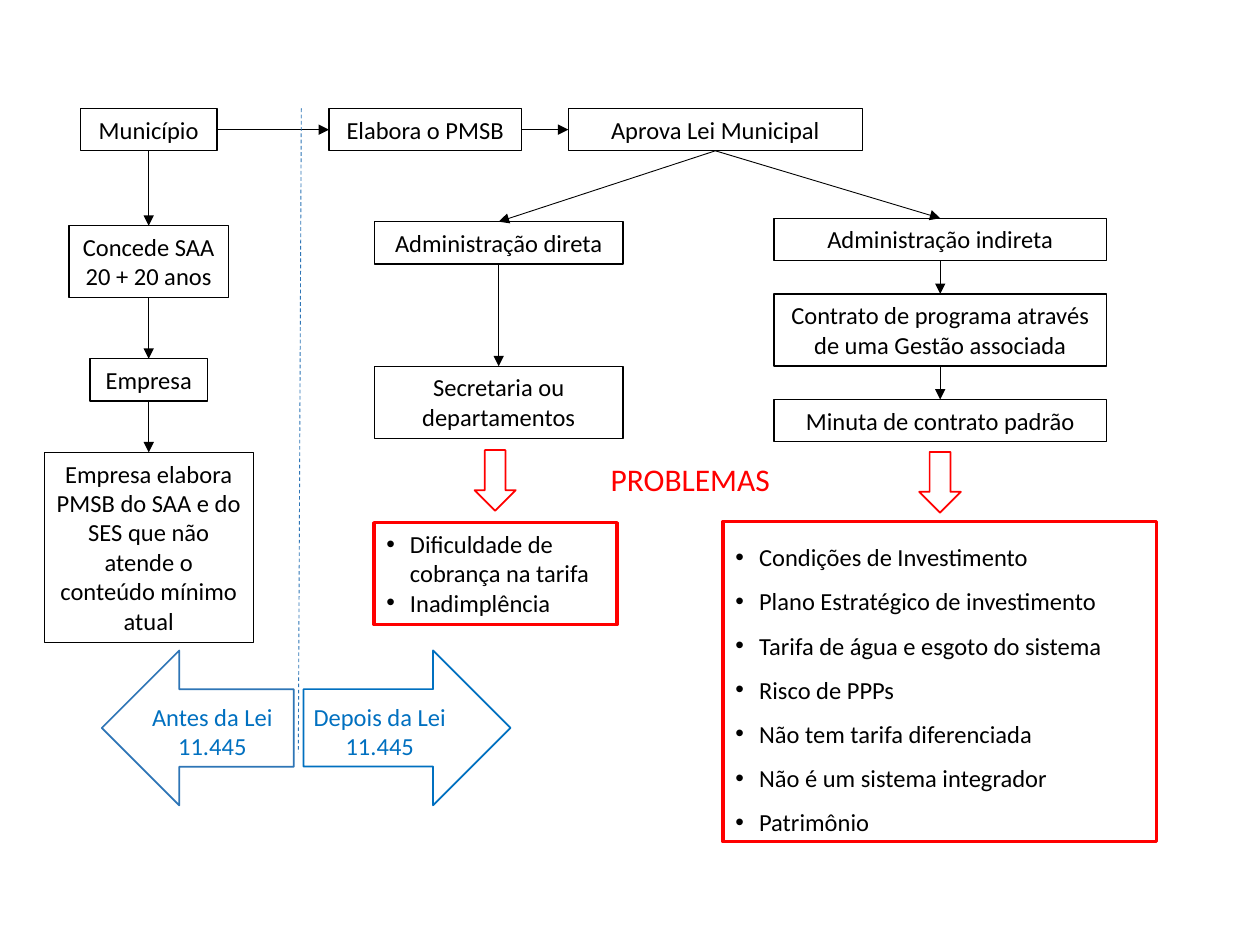
from dataclasses import dataclass
from itertools import pairwise

from lxml import etree
from pptx import Presentation
from pptx.dml.color import RGBColor
from pptx.enum import dml, shapes, text
from pptx.oxml import ns
from pptx.util import Pt

BLACK = RGBColor(0x00, 0x00, 0x00)
RED = RGBColor(0xFF, 0x00, 0x00)
BLUE = RGBColor(0x00, 0x70, 0xC0)
DARK_BLUE = RGBColor(0x2E, 0x75, 0xB6)
FONT = "Calibri"
TOP, LEFT, BOTTOM, RIGHT = 0, 1, 2, 3
ONE_LINE, TWO_LINES = 24.2, 41.2
INDENT = 13.5
LEFT_AXIS, DIRECT_AXIS, INDIRECT_AXIS = 85, 285, 537.3
FIRST_ROW = 62


@dataclass(frozen=True)
class Step:
    lines: tuple[str, ...]
    axis: float
    top: float
    width: float
    height: float = ONE_LINE


@dataclass(frozen=True)
class ProblemBox:
    lines: tuple[str, ...]
    left: float
    top: float
    width: float
    height: float
    spacing: float


@dataclass(frozen=True)
class BlockArrow:
    kind: shapes.MSO_SHAPE
    left: float
    top: float
    width: float
    height: float
    color: RGBColor
    rotation: float = 0


@dataclass(frozen=True)
class Label:
    text: str
    left: float
    top: float
    width: float
    height: float
    color: RGBColor
    size: float = 14


BEFORE_LAW = (
    Step(("Município",), LEFT_AXIS, FIRST_ROW, 78),
    Step(("Concede SAA", "20 + 20 anos"), LEFT_AXIS, 129, 91, TWO_LINES),
    Step(("Empresa",), LEFT_AXIS, 205, 67),
    Step(("Empresa elabora PMSB do SAA e do SES que não atende o conteúdo mínimo atual",),
         LEFT_AXIS, 258.5, 119.5, 108.8),
)
PLANNING = (
    Step(("Elabora o PMSB",), 243, FIRST_ROW, 110),
    Step(("Aprova Lei Municipal",), 408.8, FIRST_ROW, 168),
)
DIRECT = (
    Step(("Administração direta",), DIRECT_AXIS, 126.7, 142),
    Step(("Secretaria ou departamentos",), DIRECT_AXIS, 209.3, 142, TWO_LINES),
)
INDIRECT = (
    Step(("Administração indireta",), INDIRECT_AXIS, 124.7, 190),
    Step(("Contrato de programa através de uma Gestão associada",),
         INDIRECT_AXIS, 168, 190, TWO_LINES),
    Step(("Minuta de contrato padrão",), INDIRECT_AXIS, 228.3, 190),
)
PROBLEMS = (
    ProblemBox(("Dificuldade de cobrança na tarifa", "Inadimplência"),
               213.7, 298.7, 139, 58.2, 1),
    ProblemBox(("Condições de Investimento", "Plano Estratégico de investimento",
                "Tarifa de água e esgoto do sistema", "Risco de PPPs",
                "Não tem tarifa diferenciada", "Não é um sistema integrador",
                "Patrimônio"),
               413.2, 298, 247.7, 183, 1.5),
)
BLOCK_ARROWS = (
    BlockArrow(shapes.MSO_SHAPE.RIGHT_ARROW, 173.5, 371.7, 118.2, 88.5, BLUE),
    BlockArrow(shapes.MSO_SHAPE.RIGHT_ARROW, 58.2, 371.7, 109.7, 88.5, DARK_BLUE, 180),
    BlockArrow(shapes.MSO_SHAPE.DOWN_ARROW, 271.2, 257.2, 23.5, 34.7, RED),
    BlockArrow(shapes.MSO_SHAPE.DOWN_ARROW, 525.3, 258.3, 23.8, 34.7, RED),
)
LABELS = (
    Label("Antes da Lei 11.445", 78.5, 397.5, 85.7, TWO_LINES, BLUE),
    Label("Depois da Lei 11.445", 172, 397.5, 90, TWO_LINES, BLUE),
    Label("PROBLEMAS", 322.5, 259.5, 144, 29, RED, 18),
)


def add_outline(slide, kind, left, top, width, height, color, weight):
    """Add an unfilled preset shape."""
    shape = slide.shapes.add_shape(kind, Pt(left), Pt(top), Pt(width), Pt(height))
    shape.shadow.inherit = False
    shape.fill.background()
    shape.line.color.rgb = color
    shape.line.width = Pt(weight)
    return shape


def write(shape, lines: tuple[str, ...], color: RGBColor = BLACK, size: float = 14,
          alignment=text.PP_ALIGN.CENTER) -> None:
    frame = shape.text_frame
    frame.word_wrap = True
    frame.vertical_anchor = text.MSO_ANCHOR.TOP
    frame.text = "\n".join(lines)
    for paragraph in frame.paragraphs:
        paragraph.alignment = alignment
        paragraph.font.name = FONT
        paragraph.font.size = Pt(size)
        paragraph.font.color.rgb = color


def add_step(slide, step: Step):
    shape = add_outline(slide, shapes.MSO_SHAPE.RECTANGLE, step.axis - step.width / 2,
                        step.top, step.width, step.height, BLACK, 0.75)
    write(shape, step.lines)
    return shape


def add_problem_box(slide, box: ProblemBox) -> None:
    shape = add_outline(slide, shapes.MSO_SHAPE.RECTANGLE, box.left, box.top,
                        box.width, box.height, RED, 2)
    write(shape, box.lines, alignment=text.PP_ALIGN.LEFT)
    for paragraph in shape.text_frame.paragraphs:
        paragraph.line_spacing = box.spacing
        properties = paragraph._p.get_or_add_pPr()
        properties.set("marL", str(Pt(INDENT)))
        properties.set("indent", str(-Pt(INDENT)))
        bullet_font = etree.Element(ns.qn("a:buFont"), typeface="Arial")
        bullet = etree.Element(ns.qn("a:buChar"), char="•")
        position = 1 if properties.find(ns.qn("a:lnSpc")) is not None else 0
        properties[position:position] = [bullet_font, bullet]


def add_line(slide, start: tuple[float, float], end: tuple[float, float], color: RGBColor):
    line = slide.shapes.add_connector(
        shapes.MSO_CONNECTOR.STRAIGHT, *(Pt(value) for value in start + end))
    line.line.color.rgb = color
    line.line.width = Pt(0.5)
    etree.SubElement(line._element.spPr, ns.qn("a:effectLst"))
    return line


def join(slide, source, source_side: int, target, target_side: int) -> None:
    """Draw an arrow between the middles of two rectangle sides."""
    arrow = add_line(slide, (0, 0), (0, 0), BLACK)
    arrow.begin_connect(source, source_side)
    arrow.end_connect(target, target_side)
    etree.SubElement(arrow.line._get_or_add_ln(), ns.qn("a:tailEnd"), type="triangle")


def add_column(slide, steps: tuple[Step, ...]) -> list:
    """Add steps from top to bottom, joined by arrows, and return their boxes."""
    boxes = [add_step(slide, step) for step in steps]
    for upper, lower in pairwise(boxes):
        join(slide, upper, BOTTOM, lower, TOP)
    return boxes


def main() -> None:
    presentation = Presentation()
    presentation.slide_width, presentation.slide_height = Pt(720), Pt(540)
    slide = presentation.slides.add_slide(presentation.slide_layouts[6])

    municipality = add_column(slide, BEFORE_LAW)[0]
    plan, law = (add_step(slide, step) for step in PLANNING)
    join(slide, municipality, RIGHT, plan, LEFT)
    join(slide, plan, RIGHT, law, LEFT)
    for branch in (DIRECT, INDIRECT):
        join(slide, law, BOTTOM, add_column(slide, branch)[0], TOP)

    for box in PROBLEMS:
        add_problem_box(slide, box)
    divider = add_line(slide, (172.2, FIRST_ROW), (170.5, 430), DARK_BLUE)
    divider.line.dash_style = dml.MSO_LINE.DASH
    for item in BLOCK_ARROWS:
        arrow = add_outline(slide, item.kind, item.left, item.top,
                            item.width, item.height, item.color, 1)
        arrow.rotation = item.rotation
    for label in LABELS:
        box = slide.shapes.add_textbox(Pt(label.left), Pt(label.top),
                                       Pt(label.width), Pt(label.height))
        write(box, (label.text,), label.color, label.size)

    presentation.save("out.pptx")


if __name__ == "__main__":
    main()
